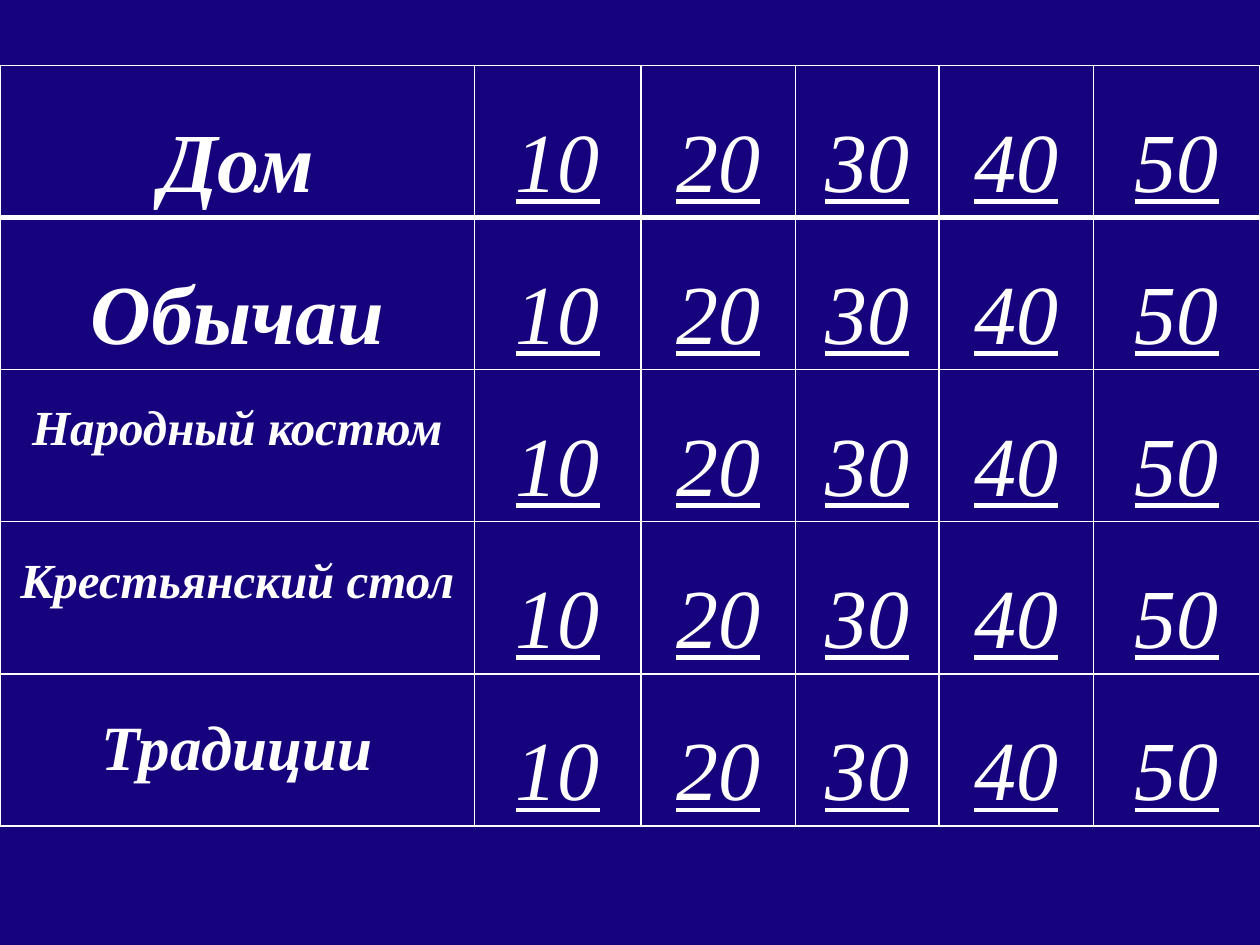
from dataclasses import dataclass

from lxml import etree
from pptx import Presentation
from pptx.dml.color import RGBColor
from pptx.enum.text import MSO_ANCHOR, PP_ALIGN
from pptx.oxml.ns import qn
from pptx.slide import Slide
from pptx.table import _Cell
from pptx.util import Pt

TOP = MSO_ANCHOR.TOP
CENTER = PP_ALIGN.CENTER
COLORS = {"navy": "16027D", "white": "FFFFFF"}
FONT = "Times New Roman"
WIDTHS = (271.2, 95, 88.4, 82, 88.4, 95)
HEIGHT = 86.95
SCORES = ("10", "20", "30", "40", "50")


@dataclass
class Topic:
    name: str
    size: int


TOPICS = (
    Topic("Дом", 48),
    Topic("Обычаи", 48),
    Topic("Народный костюм", 28),
    Topic("Крестьянский стол", 28),
    Topic("Традиции", 36),
)


def color(name: str) -> RGBColor:
    return RGBColor.from_string(COLORS[name])


def set_edge(cell: _Cell, side: str, width: float) -> None:
    props = cell._tc.get_or_add_tcPr()
    line = etree.SubElement(props, qn(f"a:ln{side}"), w=str(Pt(width)))
    fill = etree.SubElement(line, qn("a:solidFill"))
    etree.SubElement(fill, qn("a:srgbClr"), val=COLORS["white"])


def fill_cell(cell: _Cell, text: str, size: int, title: bool, row: int) -> None:
    edges = {"L": 1, "R": 1, "T": 3 if row == 1 else 1, "B": 3 if row == 0 else 1}
    for side, width in edges.items():
        set_edge(cell, side, width)
    cell.fill.solid()
    cell.fill.fore_color.rgb = color("navy")
    cell.vertical_anchor = TOP
    cell.margin_top = Pt(3.2)
    cell.margin_bottom = Pt(0)
    cell.text_frame.text = text
    para = cell.text_frame.paragraphs[0]
    para.alignment = CENTER
    para.line_spacing = 1.5
    font = para.runs[0].font
    font.name = FONT
    font.size = Pt(size)
    font.bold = title
    font.italic = True
    font.underline = not title
    font.color.rgb = color("white")


def draw_board(slide: Slide) -> None:
    frame = slide.shapes.add_table(
        len(TOPICS), len(WIDTHS), Pt(0), Pt(37.3),
        Pt(sum(WIDTHS)), Pt(HEIGHT * len(TOPICS)),
    )
    board = frame.table
    board.first_row = False
    board.horz_banding = False
    for column, width in zip(board.columns, WIDTHS):
        column.width = Pt(width)
    for row, topic in enumerate(TOPICS):
        board.rows[row].height = Pt(HEIGHT)
        fill_cell(board.cell(row, 0), topic.name, topic.size, True, row)
        for col, score in enumerate(SCORES, 1):
            fill_cell(board.cell(row, col), score, 48, False, row)


def main() -> None:
    deck = Presentation()
    deck.slide_width = Pt(720)
    deck.slide_height = Pt(540)
    slide = deck.slides.add_slide(deck.slide_layouts[6])
    slide.background.fill.solid()
    slide.background.fill.fore_color.rgb = color("navy")
    draw_board(slide)
    deck.save("out.pptx")


if __name__ == "__main__":
    main()
